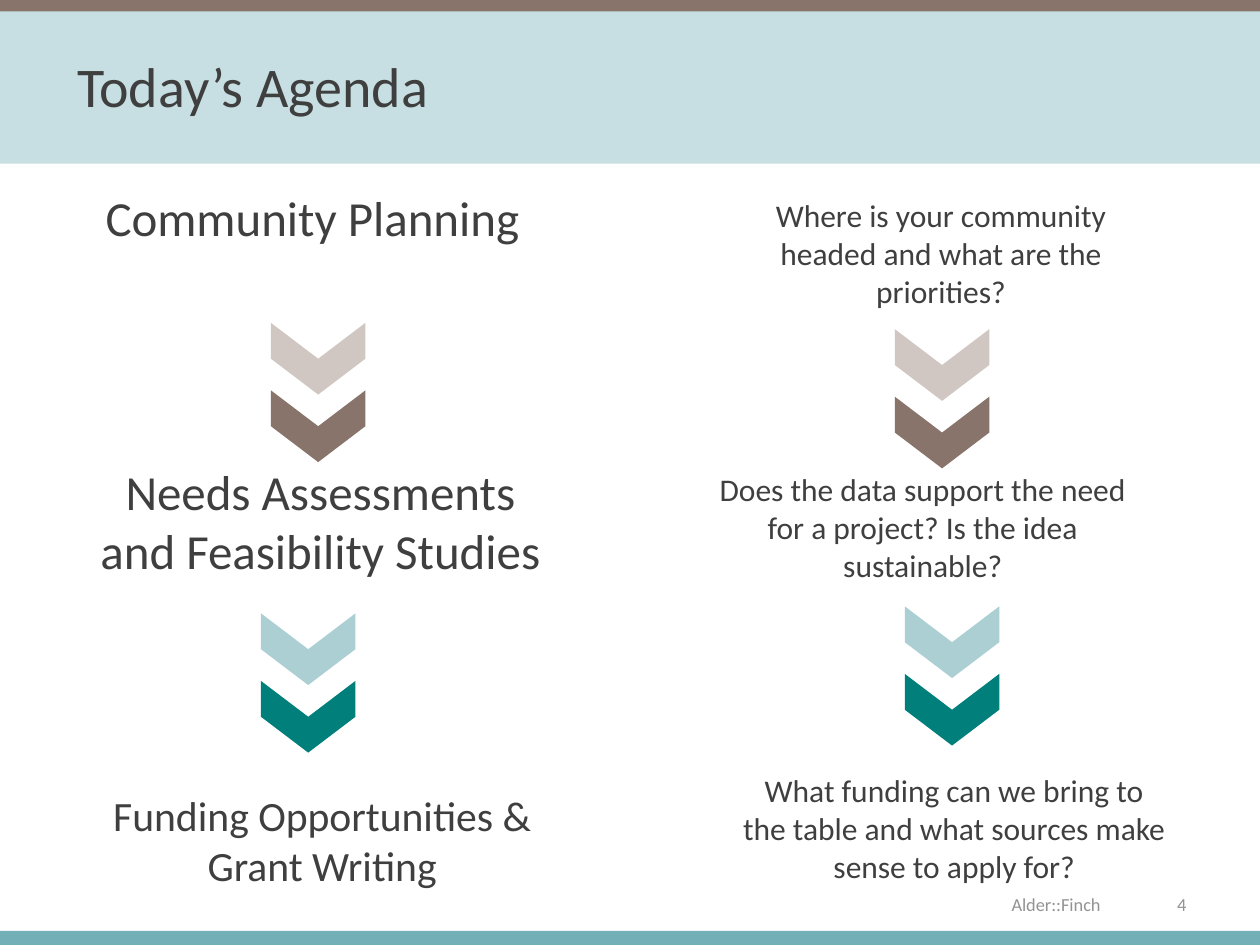
from dataclasses import dataclass

from pptx import Presentation
from pptx import util as u
from pptx.dml.color import RGBColor
from pptx.enum import shapes, text


@dataclass(frozen=True)
class Theme:
    font: str = "Calibri"
    ink: str = "3F3F3F"
    muted: str = "939393"
    brown: str = "88746A"
    pale_brown: str = "D0C7C3"
    teal: str = "007F7B"
    pale_teal: str = "ABCFD3"
    header: str = "C7DFE2"
    footer: str = "73AFB6"
    title_size: float = 32
    topic_size: float = 28
    small_topic_size: float = 23.8
    question_size: float = 18
    footer_size: float = 10.5


THEME = Theme()
WIDTH, HEIGHT = 720, 540
CHEVRON_W, CHEVRON_H, CHEVRON_STEP = 41, 54, 38.6
LEFT, CENTER, RIGHT = text.PP_ALIGN.LEFT, text.PP_ALIGN.CENTER, text.PP_ALIGN.RIGHT
TOP, MIDDLE = text.MSO_ANCHOR.TOP, text.MSO_ANCHOR.MIDDLE


def add_filled(parent, kind, box, color):
    sp = parent.add_shape(kind, *map(u.Pt, box))
    sp.shadow.inherit = False
    sp.fill.solid()
    sp.fill.fore_color.rgb = RGBColor.from_string(color)
    sp.line.fill.background()
    return sp


def add_band(s, top, height, color):
    add_filled(s.shapes, shapes.MSO_SHAPE.RECTANGLE, (0, top, WIDTH, height), color)


def add_text(s, words, box, size, align=CENTER, anchor=TOP, color=THEME.ink):
    tf = s.shapes.add_textbox(*map(u.Pt, box)).text_frame
    tf.word_wrap = True
    tf.vertical_anchor = anchor
    p = tf.paragraphs[0]
    p.text = words
    p.alignment = align
    p.font.name = THEME.font
    p.font.size = u.Pt(size)
    p.font.color.rgb = RGBColor.from_string(color)


def add_down_arrows(s, left, top, colors):
    """Group one downward chevron per colour, stacked from the top."""
    group = s.shapes.add_group_shape()
    for i, color in enumerate(colors):
        box = (left, top + i * CHEVRON_STEP, CHEVRON_W, CHEVRON_H)
        sp = add_filled(group.shapes, shapes.MSO_SHAPE.CHEVRON, box, color)
        sp.rotation = 90


def main():
    prs = Presentation()
    prs.slide_width, prs.slide_height = u.Pt(WIDTH), u.Pt(HEIGHT)
    s = prs.slides.add_slide(prs.slide_layouts[6])

    add_band(s, 0, 7.2, THEME.brown)
    add_band(s, 532, 8, THEME.footer)
    add_band(s, 6.5, 87, THEME.header)

    add_text(s, "Today’s Agenda", (37, 21.6, 648, 54), THEME.title_size, LEFT, MIDDLE)
    add_text(s, "4", (648, 509, 37, 15), THEME.footer_size, RIGHT, MIDDLE, THEME.muted)
    add_text(s, "Alder::Finch", (37, 509, 599, 15), THEME.footer_size, RIGHT, MIDDLE,
             THEME.muted)

    topics = [
        ("Community Planning", (32, 103.7, 293, 54), THEME.topic_size),
        ("Needs Assessments and Feasibility Studies", (45, 260, 276, 76),
         THEME.topic_size),
        ("Funding Opportunities & Grant Writing", (46, 448, 276, 54),
         THEME.small_topic_size),
    ]
    for words, box, size in topics:
        add_text(s, words, box, size)

    questions = [
        ("Where is your community headed and what are the priorities?", 408.5, 108.7),
        ("Does the data support the need for a project? Is the idea sustainable?",
         398, 265),
        ("What funding can we bring to the table and what sources make sense "
         "to apply for?", 416, 437),
    ]
    for words, left, top in questions:
        add_text(s, words, (left, top, 258.5, 72.7), THEME.question_size)

    browns = (THEME.pale_brown, THEME.brown)
    teals = (THEME.pale_teal, THEME.teal)
    for left, top, colors in [(161.3, 178, browns), (155.6, 344, teals),
                              (517.8, 181.6, browns), (523.5, 340, teals)]:
        add_down_arrows(s, left, top, colors)

    prs.save("out.pptx")


if __name__ == "__main__":
    main()
